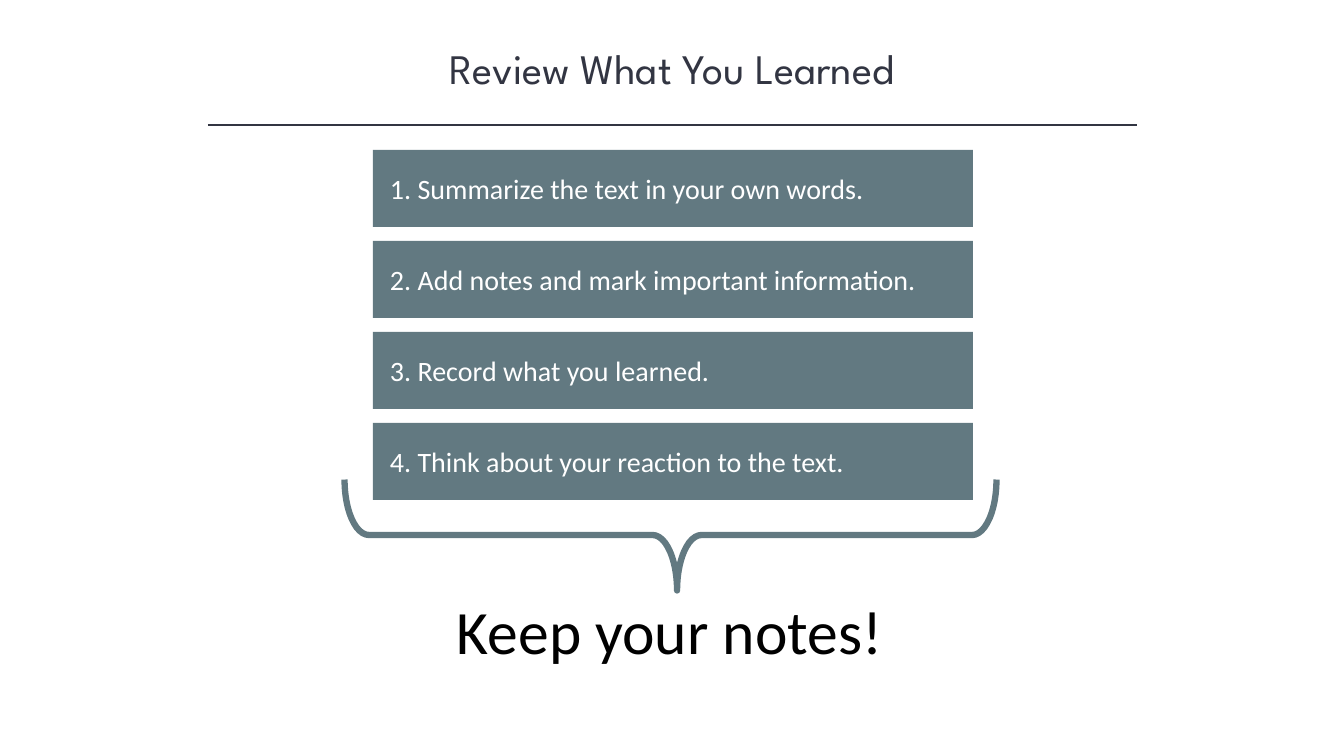
from lxml import etree
from pptx import Presentation, util as u
from pptx.dml.color import RGBColor
from pptx.enum import shapes as sh, text as tx
from pptx.oxml.ns import qn

TITLE = "Review What You Learned"
STEPS = [
    "1. Summarize the text in your own words.",
    "2. Add notes and mark important information.",
    "3. Record what you learned.",
    "4. Think about your reaction to the text.",
]
CLOSING = "Keep your notes!"
HUES = {"ink": "323542", "slate": "627981", "white": "FFFFFF", "black": "000000"}

WIDE, HIGH = 1344, 756
PX = u.Inches(7.5) / HIGH
LEFT, TOP, BAR_W, BAR_H, GAP = 373, 150, 600, 77, 14


def px(*sizes):
    """Turn px lengths into EMU."""
    return [u.Emu(round(size * PX)) for size in sizes]


def hue(name):
    return RGBColor.from_string(HUES[name])


def write(shape, words, size, color, font="Calibri", align="LEFT", inset=10, wrap=True):
    frame = shape.text_frame
    frame.word_wrap = wrap
    frame.auto_size = tx.MSO_AUTO_SIZE.NONE
    frame.vertical_anchor = tx.MSO_ANCHOR.MIDDLE
    frame.margin_left = frame.margin_right = px(inset)[0]
    frame.margin_top = frame.margin_bottom = px(5)[0]
    para = frame.paragraphs[0]
    para.alignment = tx.PP_ALIGN[align]
    para.line_spacing = 1.0
    run = para.add_run()
    run.text = words
    run.font.name, run.font.size = font, u.Pt(size)
    run.font.color.rgb = hue(color)


deck = Presentation()
deck.slide_width, deck.slide_height = px(WIDE, HIGH)
slide = deck.slides.add_slide(deck.slide_layouts[5])
parts = slide.shapes

title = parts.title
title.left, title.top, title.width, title.height = px(168, 37, 1008, 62)
write(title, TITLE, 30, "ink", font="League Spartan", align="CENTER")

rule = parts.add_connector(sh.MSO_CONNECTOR.STRAIGHT, *px(208, 125, 1137, 125))
rule.line.color.rgb = hue("ink")
rule.line.width = u.Pt(1)
etree.SubElement(rule._element.spPr, qn("a:effectLst"))

for row, step in enumerate(STEPS):
    top = TOP + row * (BAR_H + GAP)
    bar = parts.add_shape(sh.MSO_SHAPE.RECTANGLE, *px(LEFT, top, BAR_W, BAR_H))
    bar.shadow.inherit = False
    bar.fill.solid()
    bar.fill.fore_color.rgb = hue("slate")
    bar.line.fill.background()
    write(bar, step, 20, "white", inset=17)

brace = parts.add_shape(sh.MSO_SHAPE.RIGHT_BRACE, *px(615, 209, 111, 652))
brace.rotation = 90
brace.adjustments[0], brace.adjustments[1] = 0.22, 0.49
brace.shadow.inherit = False
brace.fill.background()
brace.line.color.rgb = hue("slate")
brace.line.width = u.Pt(4.5)

closing = parts.add_textbox(*px(447, 587, 451, 85))
write(closing, CLOSING, 44, "black", wrap=False)

deck.save("out.pptx")
